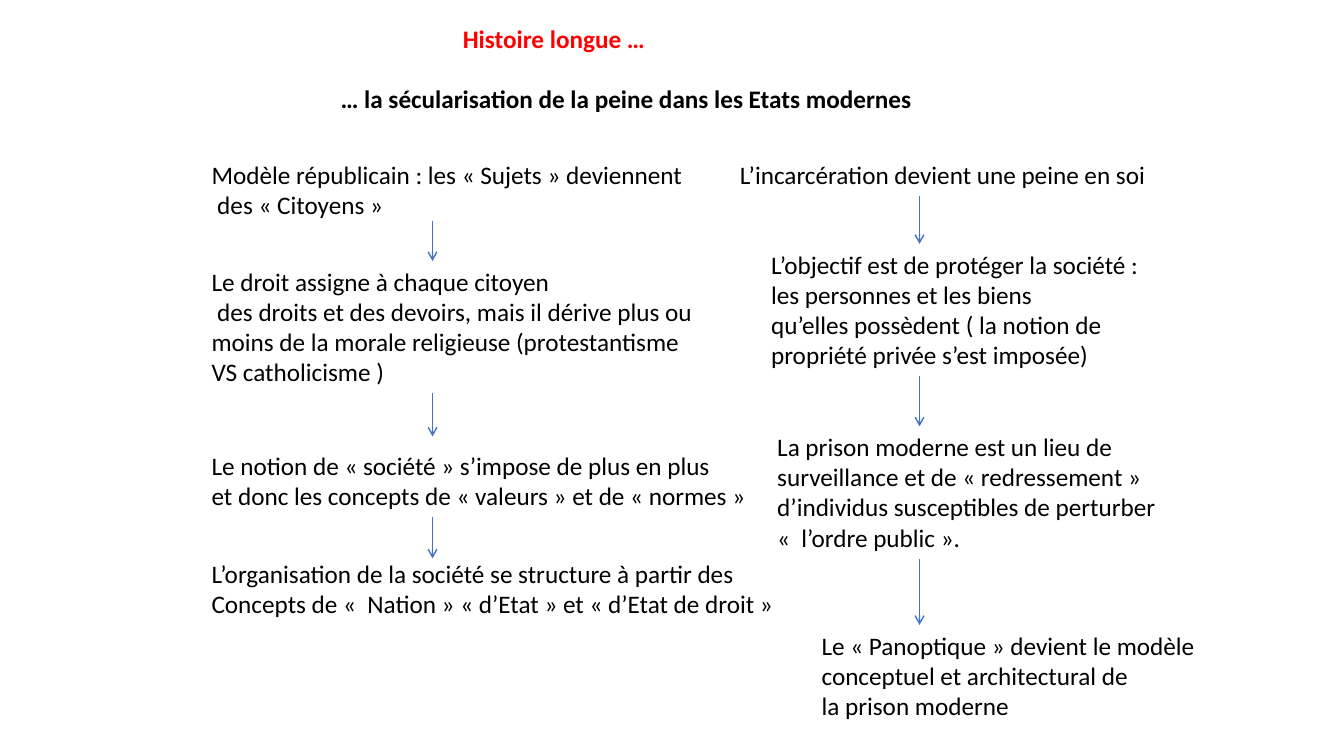
from lxml import etree
from pptx import Presentation
from pptx.dml.color import RGBColor
from pptx.enum.shapes import MSO_CONNECTOR
from pptx.enum.text import MSO_ANCHOR, MSO_AUTO_SIZE, PP_ALIGN
from pptx.oxml.ns import qn
from pptx.util import Pt

PX = 9144  # 100 px to the inch
BLACK = RGBColor(0x00, 0x00, 0x00)
RED = RGBColor(0xFF, 0x00, 0x00)
BLUE = RGBColor(0x44, 0x72, 0xC4)
STRAIGHT = MSO_CONNECTOR.STRAIGHT
TOP = MSO_ANCHOR.TOP
GROW = MSO_AUTO_SIZE.SHAPE_TO_FIT_TEXT
LEFT = PP_ALIGN.LEFT
LINE_HEIGHT, PADDING = 30, 10


def write_lines(shape, left, top, width, lines, color=BLACK, bold=False):
    """Place a shape and fill it with one unwrapped paragraph per line."""
    shape.left, shape.top, shape.width = left * PX, top * PX, width * PX
    shape.height = (len(lines) * LINE_HEIGHT + PADDING) * PX
    frame = shape.text_frame
    frame.text = "\n".join(lines)
    frame.word_wrap = False
    frame.auto_size = GROW
    frame.vertical_anchor = TOP
    for paragraph in frame.paragraphs:
        paragraph.alignment = LEFT
        paragraph.font.name = "Calibri"
        paragraph.font.size = Pt(18)
        paragraph.font.bold = bold
        paragraph.font.color.rgb = color


presentation = Presentation()
presentation.slide_width = 1333 * PX
presentation.slide_height = 750 * PX
slide = presentation.slides.add_slide(presentation.slide_layouts[5])

write_lines(slide.shapes.title, 449, 18, 204, ["Histoire longue …"], RED, True)
subtitle = slide.shapes.add_textbox(0, 0, 0, 0)
write_lines(subtitle, 328, 78, 597,
            ["… la sécularisation de la peine dans les Etats modernes"], bold=True)

# left, top, width, lines
steps = [
    (200, 153, 492, ["Modèle républicain : les « Sujets » deviennent",
                     " des « Citoyens »"]),
    (200, 259, 503, ["Le droit assigne à chaque citoyen",
                     " des droits et des devoirs, mais il dérive plus ou",
                     "moins de la morale religieuse (protestantisme",
                     "VS catholicisme )"]),
    (200, 442, 555, ["Le notion de « société » s’impose de plus en plus",
                     "et donc les concepts de « valeurs » et de « normes »"]),
    (200, 549, 583, ["L’organisation de la société se structure à partir des",
                     "Concepts de «  Nation » « d’Etat » et « d’Etat de droit »"]),
    (724, 153, 426, ["L’incarcération devient une peine en soi"]),
    (755, 242, 388, ["L’objectif est de protéger la société :",
                     "les personnes et les biens",
                     "qu’elles possèdent ( la notion de",
                     "propriété privée s’est imposée)"]),
    (761, 423, 399, ["La prison moderne est un lieu de",
                     "surveillance et de « redressement »",
                     "d’individus susceptibles de perturber",
                     "«  l’ordre public »."]),
    (805, 620, 395, ["Le « Panoptique » devient le modèle",
                     "conceptuel et architectural de",
                     "la prison moderne"]),
]
for left, top, width, lines in steps:
    write_lines(slide.shapes.add_textbox(0, 0, 0, 0), left, top, width, lines)

# column centre: (start, end) of each arrow
arrows = {
    429: [(219, 259), (390, 433), (513, 554)],
    912: [(194, 242), (373, 423), (555, 620)],
}
for x, spans in arrows.items():
    for start, end in spans:
        arrow = slide.shapes.add_connector(STRAIGHT, x * PX, start * PX, x * PX, end * PX)
        arrow.line.color.rgb = BLUE
        arrow.line.width = Pt(1)
        etree.SubElement(arrow.line._get_or_add_ln(), qn("a:tailEnd"), type="arrow")
        etree.SubElement(arrow._element.spPr, qn("a:effectLst"))

presentation.save("out.pptx")
